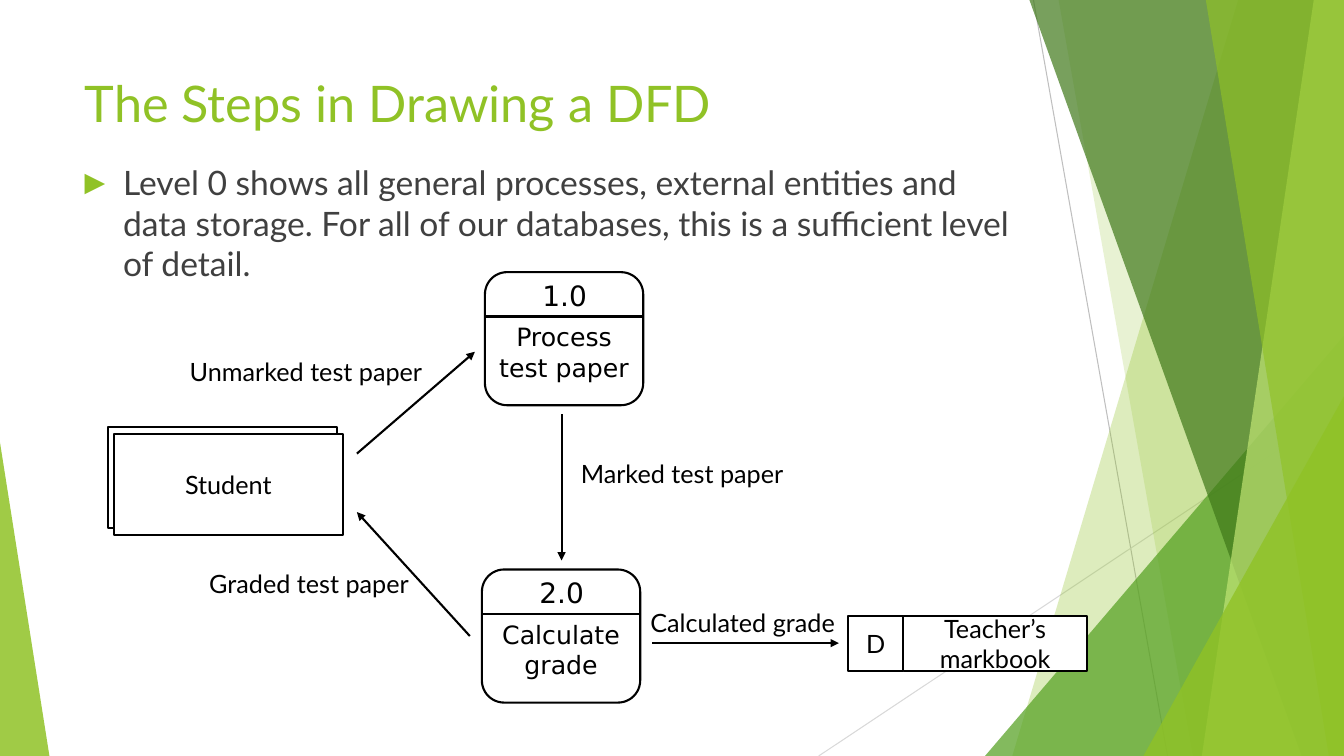
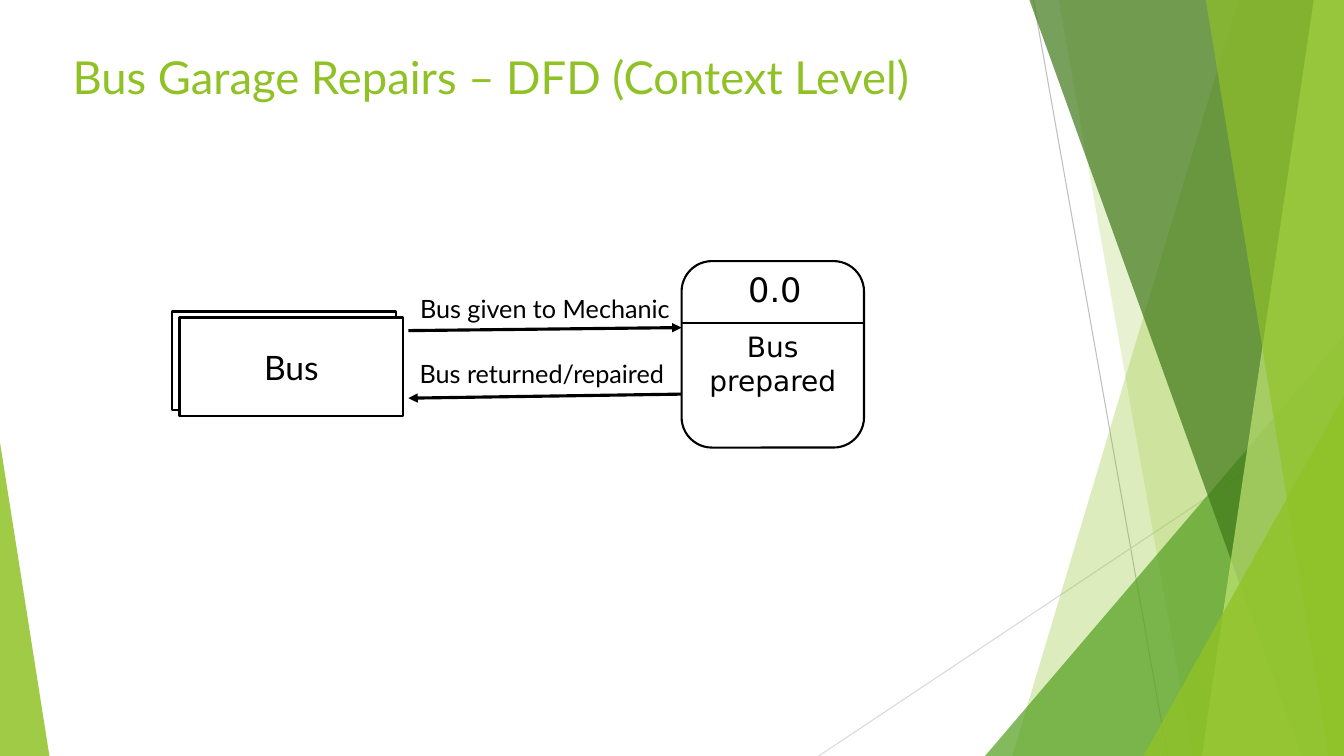
from lxml import etree
from pptx import Presentation
from pptx.dml.color import RGBColor
from pptx.enum.shapes import MSO_CONNECTOR, MSO_SHAPE
from pptx.enum.text import MSO_ANCHOR, MSO_AUTO_SIZE, PP_ALIGN
from pptx.oxml.ns import qn
from pptx.util import Inches, Pt

RECT, ROUNDED = MSO_SHAPE.RECTANGLE, MSO_SHAPE.ROUNDED_RECTANGLE
TRIANGLE, STRAIGHT = MSO_SHAPE.ISOSCELES_TRIANGLE, MSO_CONNECTOR.STRAIGHT
LEFT, CENTER = PP_ALIGN.LEFT, PP_ALIGN.CENTER
TOP, MIDDLE = MSO_ANCHOR.TOP, MSO_ANCHOR.MIDDLE
NO_AUTOFIT = MSO_AUTO_SIZE.NONE

GREEN = RGBColor(0x90, 0xC2, 0x26)
MID_GREEN = RGBColor(0x54, 0xA0, 0x21)
DARK_GREEN = RGBColor(0x3F, 0x78, 0x19)
PALE_GREEN = RGBColor(0xC0, 0xE4, 0x74)
BODY_GRAY = RGBColor(0x40, 0x40, 0x40)
RULE_GRAY = RGBColor(0xBF, 0xBF, 0xBF)
PALE_GRAY = RGBColor(0xD9, 0xD9, 0xD9)
BLACK = RGBColor(0, 0, 0)
WHITE = RGBColor(0xFF, 0xFF, 0xFF)
FONT, PROCESS_FONT = "Lato", "DejaVu Sans"
WIDTH, HEIGHT = 13.33, 7.5


def write(frame, text, size=18, font=FONT, color=BLACK, align=CENTER,
          anchor=TOP, inset_y=0.05):
    frame.word_wrap = True
    frame.auto_size = NO_AUTOFIT
    frame.vertical_anchor = anchor
    frame.margin_left = frame.margin_right = Inches(0.1)
    frame.margin_top = frame.margin_bottom = Inches(inset_y)
    paragraph = frame.paragraphs[0]
    paragraph.alignment = align
    paragraph.space_before = Pt(0)
    run = paragraph.add_run()
    run.text = text
    run.font.size, run.font.name = Pt(size), font
    run.font.color.rgb = color


def draw_line(slide, x1, y1, x2, y2, color=BLACK, width=1.5, arrow=False):
    line = slide.shapes.add_connector(
        STRAIGHT, Inches(x1), Inches(y1), Inches(x2), Inches(y2))
    line.line.color.rgb, line.line.width = color, Pt(width)
    if arrow:
        outline = line.element.xpath(".//a:ln")[0]
        etree.SubElement(outline, qn("a:tailEnd"), type="triangle")
    etree.SubElement(line.element.spPr, qn("a:effectLst"))
    return line


prs = Presentation()
prs.slide_width, prs.slide_height = Inches(WIDTH), Inches(HEIGHT)
steps = prs.slides.add_slide(prs.slide_layouts[1])
garage = prs.slides.add_slide(prs.slide_layouts[5])

# Green facets: (top x, bottom x) runs to the right edge,
# (left, top, width, apex) is a triangle standing on the bottom edge
facets = [
    ((12.28, 10.04), GREEN, 30),
    ((10.5, 11.83), GREEN, 20),
    ((9.77, 3.33, 3.56, 1), MID_GREEN, 72),
    ((10.21, 12.91), DARK_GREEN, 70),
    ((13.03, 11.92), PALE_GREEN, 70),
    ((11.96, 13.18), GREEN, 65),
    ((11.34, 3.93, 1.99, 1), GREEN, 80),
    ((0, 4.39, 0.49, 0), GREEN, 85),
]
backdrop = [
    draw_line(steps, 10.25, 0, 11.58, HEIGHT, color=RULE_GRAY, width=0.75),
    draw_line(steps, WIDTH, 4.03, 8.12, HEIGHT, color=PALE_GRAY, width=0.75),
]
for outline, color, opacity in facets:
    if len(outline) == 2:
        top_x, bottom_x = outline
        builder = steps.shapes.build_freeform(Inches(top_x), 0)
        corners = [(WIDTH, 0), (WIDTH, HEIGHT), (bottom_x, HEIGHT)]
        builder.add_line_segments(
            [(Inches(x), Inches(y)) for x, y in corners], close=True)
        facet = builder.convert_to_shape()
    else:
        left, top, width, apex = outline
        facet = steps.shapes.add_shape(
            TRIANGLE, Inches(left), Inches(top), Inches(width), Inches(HEIGHT - top))
        facet.adjustments[0] = apex
    facet.shadow.inherit = False
    facet.fill.solid()
    facet.fill.fore_color.rgb = color
    facet.line.fill.background()
    fill_color = facet.element.xpath(".//a:solidFill/a:srgbClr")[0]
    etree.SubElement(fill_color, qn("a:alpha"), val=str(opacity * 1000))
    backdrop.append(facet)

# The backdrop belongs to the master, behind its placeholders
master_tree = prs.slide_master.shapes.element
for index, part in enumerate(backdrop):
    part.element.xpath(".//p:cNvPr")[0].set("id", str(100 + index))
    master_tree.insert(2 + index, part.element)

# Titles
for slide, heading, left, top, size in [
    (steps, "The Steps in Drawing a DFD", 0.74, 0.67, 36),
    (garage, "Bus Garage Repairs – DFD (Context Level)", 0.62, 0.44, 32.4),
]:
    title = slide.shapes.title
    title.left, title.top = Inches(left), Inches(top)
    title.width, title.height = Inches(9.4), Inches(0.76)
    write(title.text_frame, heading, size=size, color=GREEN, align=LEFT)

# Bulleted explanation
explanation = steps.placeholders[1]
explanation.left, explanation.top = Inches(0.74), Inches(1.56)
explanation.width, explanation.height = Inches(9.4), Inches(5.04)
write(explanation.text_frame,
      "Level 0 shows all general processes, external entities and data storage. "
      "For all of our databases, this is a sufficient level of detail.",
      size=24, color=BODY_GRAY, align=LEFT)
bullet = explanation.element.xpath(".//a:pPr")[0]
bullet.set("marL", str(Inches(0.38)))
bullet.set("indent", str(-Inches(0.38)))
bullet_color = etree.SubElement(bullet, qn("a:buClr"))
etree.SubElement(bullet_color, qn("a:srgbClr"), val=str(GREEN))
etree.SubElement(bullet, qn("a:buSzPct"), val="80000")
etree.SubElement(bullet, qn("a:buFont"), typeface=PROCESS_FONT)
etree.SubElement(bullet, qn("a:buChar"), char="▶")

# Data flows: arrow ends and width
for slide, ends, width in [
    (steps, (3.54, 4.5, 4.71, 3.49), 1.5),
    (steps, (5.57, 4.11, 5.57, 5.56), 1.5),
    (steps, (4.66, 6.31, 3.54, 5.08), 1.5),
    (steps, (6.47, 6.38, 8.32, 6.38), 1.5),
    (garage, (4.05, 3.28, 6.76, 3.25), 2.25),
    (garage, (6.76, 3.91, 4.05, 3.95), 2.25),
]:
    draw_line(slide, *ends, width=width, arrow=True)

# Entities (two stacked boxes), data store and process outlines
for slide, preset, left, top, width, height, text, size in [
    (steps, RECT, 1.07, 4.24, 2.27, 1, "", 18),
    (steps, RECT, 1.13, 4.31, 2.27, 1, "Student", 18),
    (steps, RECT, 8.96, 6.11, 1.82, 0.55, "Teacher’s markbook", 18),
    (steps, RECT, 8.41, 6.11, 0.55, 0.55, "D", 18),
    (steps, ROUNDED, 4.81, 2.7, 1.57, 1.32, "", 18),
    (steps, ROUNDED, 4.78, 5.65, 1.57, 1.32, "", 18),
    (garage, RECT, 1.71, 3.09, 2.22, 0.98, "", 24),
    (garage, RECT, 1.78, 3.15, 2.22, 0.98, "Bus", 24),
    (garage, ROUNDED, 6.76, 2.59, 1.81, 1.85, "", 24),
]:
    box = slide.shapes.add_shape(
        preset, Inches(left), Inches(top), Inches(width), Inches(height))
    box.shadow.inherit = False
    box.fill.solid()
    box.fill.fore_color.rgb = WHITE
    box.line.color.rgb, box.line.width = BLACK, Pt(1.5)
    if text:
        write(box.text_frame, text, size=size, anchor=MIDDLE)

# Process dividers
for slide, left, y, width in [
    (steps, 4.81, 3.14, 1.57), (steps, 4.78, 6.09, 1.57), (garage, 6.76, 3.2, 1.81),
]:
    draw_line(slide, left, y, left + width, y)

# Flow labels, process numbers and process names
flow = {}
process = {"font": PROCESS_FONT, "inset_y": 0}
for slide, left, top, width, height, text, size, style in [
    (steps, 1.71, 3.49, 2.65, 0.4, "Unmarked test paper", 18, flow),
    (steps, 1.74, 5.59, 2.65, 0.4, "Graded test paper", 18, flow),
    (steps, 5.44, 4.5, 2.65, 0.4, "Marked test paper", 18, flow),
    (steps, 6.31, 5.98, 2.11, 0.4, "Calculated grade", 18, flow),
    (steps, 4.91, 2.76, 1.38, 0.34, "1.0", 20, process),
    (steps, 4.81, 3.19, 1.57, 0.61, "Process test paper", 18, process),
    (steps, 4.88, 5.71, 1.38, 0.34, "2.0", 20, process),
    (steps, 4.78, 6.14, 1.57, 0.61, "Calculate grade", 18, process),
    (garage, 4.05, 2.86, 2.71, 0.4, "Bus given to Mechanic", 18, flow),
    (garage, 3.99, 3.51, 2.77, 0.4, "Bus returned/repaired", 18, flow),
    (garage, 6.89, 2.67, 1.59, 0.4, "0.0", 24, process),
    (garage, 6.76, 3.27, 1.81, 0.67, "Bus prepared", 20, process),
]:
    label = slide.shapes.add_textbox(
        Inches(left), Inches(top), Inches(width), Inches(height))
    write(label.text_frame, text, size=size, **style)

prs.save("out.pptx")
